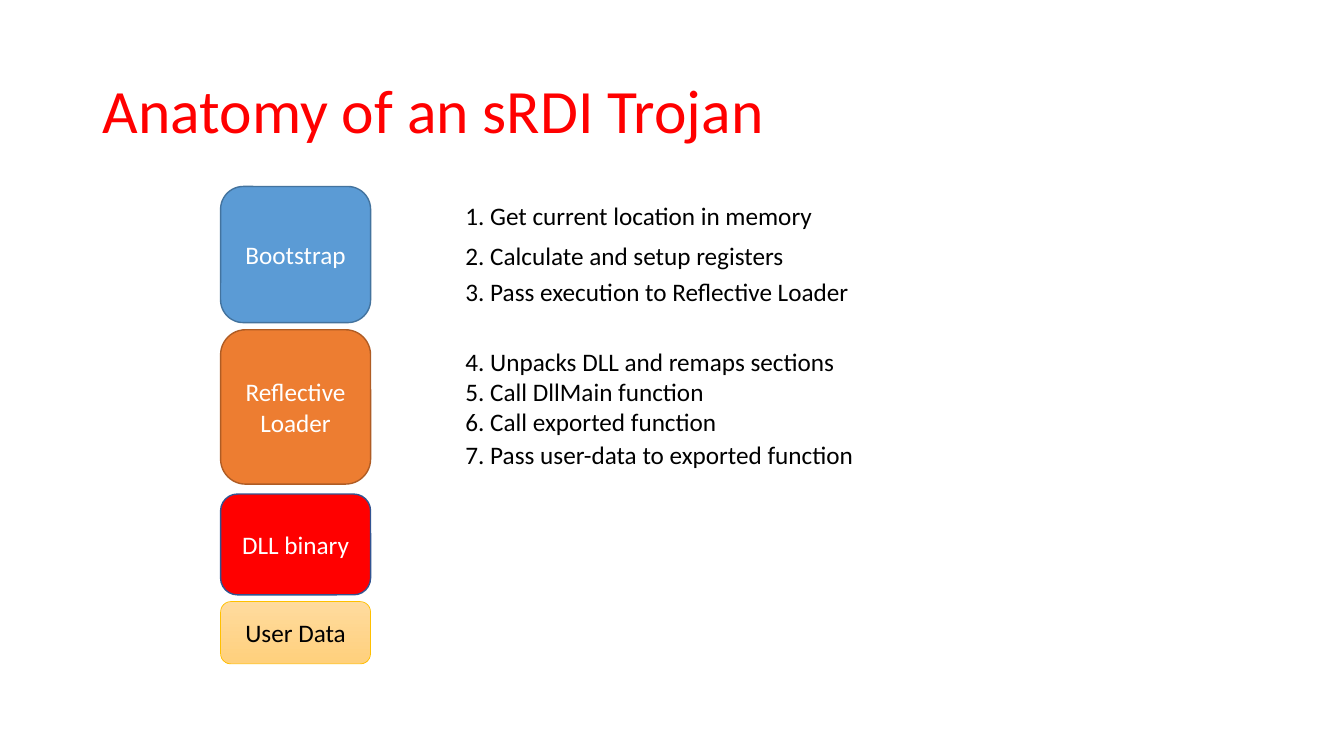
from pptx import Presentation
from pptx import util as u
from pptx.dml.color import RGBColor
from pptx.enum import shapes, text


def rgb(value):
    return RGBColor.from_string(value)


def write(tf, content, size=18, color="000000", font="Calibri",
          align=text.PP_ALIGN.LEFT, anchor=text.MSO_ANCHOR.TOP,
          wrap=True, spacing=None):
    tf.word_wrap = wrap
    tf.vertical_anchor = anchor
    p = tf.paragraphs[0]
    p.alignment = align
    p.line_spacing = spacing
    r = p.add_run()
    r.text = content
    r.font.size = u.Pt(size)
    r.font.name = font
    r.font.color.rgb = rgb(color)


class Deck:
    """Holds the shared style and the current slide."""
    title_color = "FF0000"
    box_left, box_width = 5.56, 3.78
    step_left, step_height = 11.48, 1.02

    def __init__(self):
        self.prs = Presentation()
        self.prs.slide_width = u.Cm(33.87)
        self.prs.slide_height = u.Cm(19.05)
        self.s = self.prs.slides.add_slide(self.prs.slide_layouts[6])

    def textbox(self, left, top, width, height):
        return self.s.shapes.add_textbox(
            u.Cm(left), u.Cm(top), u.Cm(width), u.Cm(height)).text_frame

    def title(self, content):
        write(self.textbox(2.34, 1.02, 29.21, 3.68), content, size=44,
              color=self.title_color, anchor=text.MSO_ANCHOR.MIDDLE, spacing=0.9)

    def box(self, label, top, height, fills, line, weight=1, color="FFFFFF"):
        sp = self.s.shapes.add_shape(
            shapes.MSO_SHAPE.ROUNDED_RECTANGLE, u.Cm(self.box_left), u.Cm(top),
            u.Cm(self.box_width), u.Cm(height))
        sp.shadow.inherit = False
        if len(fills) == 1:
            sp.fill.solid()
            sp.fill.fore_color.rgb = rgb(fills[0])
        else:
            sp.fill.gradient()
            sp.fill.gradient_angle = 270
            for stop, fill in zip(sp.fill.gradient_stops, fills):
                stop.color.rgb = rgb(fill)
        sp.line.color.rgb = rgb(line)
        sp.line.width = u.Pt(weight)
        write(sp.text_frame, label, color=color, align=text.PP_ALIGN.CENTER,
              anchor=text.MSO_ANCHOR.MIDDLE)

    def step(self, content, top, width):
        tf = self.textbox(self.step_left, top, width, self.step_height)
        write(tf, content, wrap=False)
        tf.auto_size = text.MSO_AUTO_SIZE.SHAPE_TO_FIT_TEXT


def main():
    deck = Deck()
    deck.title("Anatomy of an sRDI Trojan")

    # Trojan layers, top to bottom
    deck.box("Bootstrap", 4.7, 3.43, ["5B9BD5"], "43739E")
    deck.box("Reflective Loader", 8.31, 3.89, ["ED7D31"], "AF5C24")
    deck.box("DLL binary", 12.45, 2.54, ["FF0000"], "325491")
    deck.box("User Data", 15.16, 1.57, ["FFDB9E", "FFD07C"], "FFC000",
             weight=0.5, color="000000")

    # Execution steps: wording, top, width
    steps = [
        ("Get current location in memory", 4.93, 9.35),
        ("Calculate and setup registers", 5.94, 8.64),
        ("Pass execution to Reflective Loader", 6.83, 10.29),
        ("Unpacks DLL and remaps sections", 8.59, 9.93),
        ("Call DllMain function", 9.35, 6.6),
        ("Call exported function", 10.11, 6.91),
        ("Pass user-data to exported function", 10.95, 10.41),
    ]
    for number, (wording, top, width) in enumerate(steps, 1):
        deck.step(f"{number}. {wording}", top, width)

    deck.prs.save("out.pptx")


if __name__ == "__main__":
    main()
